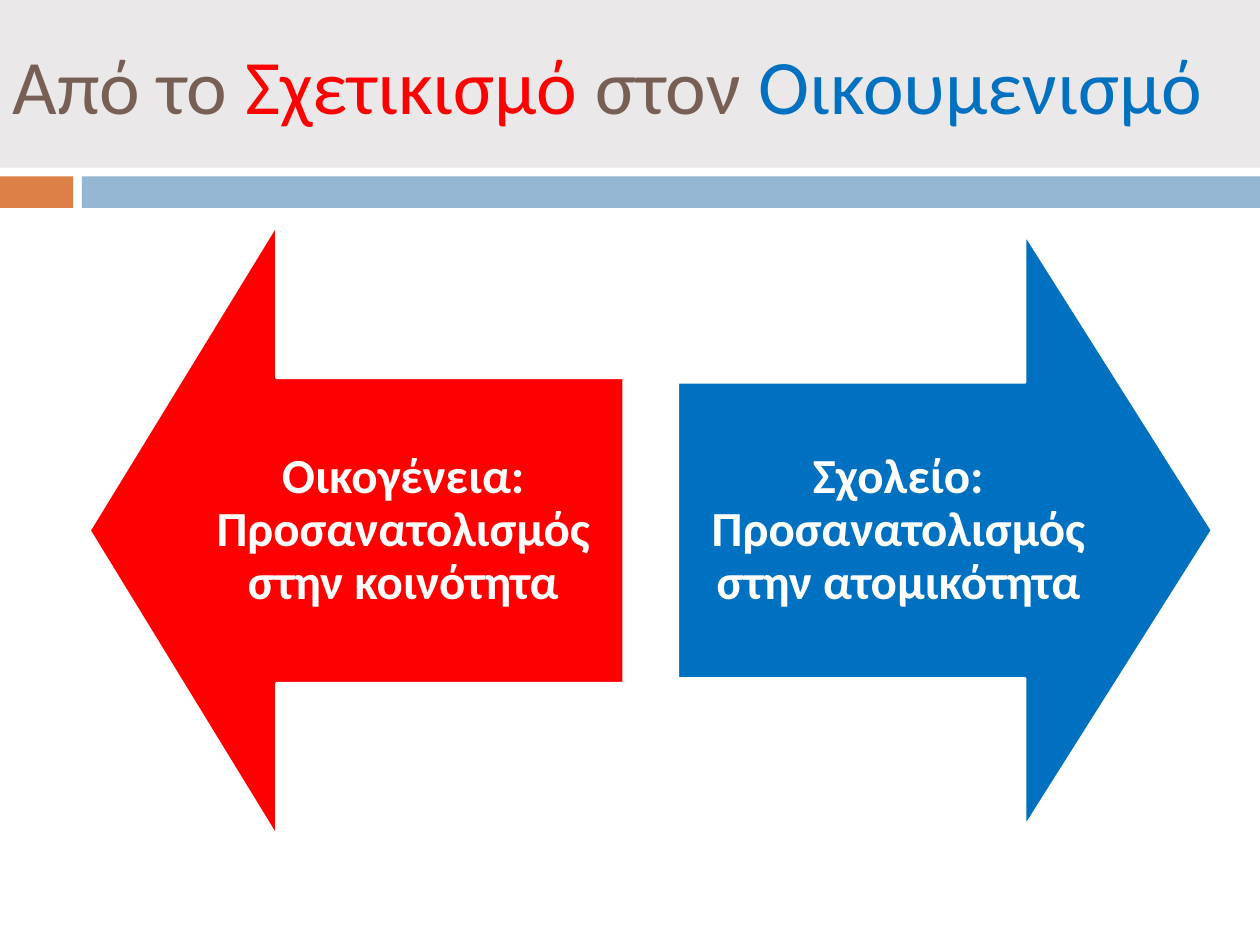
from dataclasses import dataclass

from pptx import Presentation
from pptx.dml.color import RGBColor
from pptx.enum.shapes import MSO_SHAPE
from pptx.enum.text import MSO_ANCHOR, MSO_AUTO_SIZE, PP_ALIGN
from pptx.util import Inches, Pt

RECT, ARROW = MSO_SHAPE.RECTANGLE, MSO_SHAPE.UP_ARROW
MIDDLE, NO_FIT = MSO_ANCHOR.MIDDLE, MSO_AUTO_SIZE.NONE
LEFT, CENTER = PP_ALIGN.LEFT, PP_ALIGN.CENTER
WIDE, HIGH = 10, 7.5
TITLE_ONLY = 5


@dataclass(frozen=True)
class Theme:
    font: str = "Calibri"
    title: int = 44
    body: int = 28
    brown: str = "775F55"
    red: str = "FF0000"
    blue: str = "0070C0"
    white: str = "FFFFFF"
    pale: str = "EAE8E8"
    orange: str = "DD8047"
    sky: str = "94B6D2"


THEME = Theme()


def paint(shape, color):
    shape.fill.solid()
    shape.fill.fore_color.rgb = RGBColor.from_string(color)


def place(shape, box):
    shape.left, shape.top, shape.width, shape.height = map(Inches, box)


def add_run(para, text, size, color, bold=False):
    run = para.add_run()
    run.text = text
    font = run.font
    font.name, font.size, font.bold = THEME.font, Pt(size), bold
    font.color.rgb = RGBColor.from_string(color)


def add_title(slide, box, parts):
    title = slide.shapes.title
    place(title, box)
    paint(title, THEME.pale)
    frame = title.text_frame
    frame.word_wrap, frame.auto_size = True, NO_FIT
    frame.vertical_anchor = MIDDLE
    para = frame.paragraphs[0]
    para.alignment = LEFT
    for text, color in parts:
        add_run(para, text, THEME.title, color)


def add_band(slide, box):
    """Two bars, split by a narrow gap."""
    left, top, width, height = box
    short, gap = 0.58, 0.07
    start = short + gap
    bars = ((left, short, THEME.orange),
            (left + start, width - start, THEME.sky))
    for x, w, color in bars:
        bar = slide.shapes.add_shape(RECT, *map(Inches, (x, top, w, height)))
        paint(bar, color)
        bar.line.fill.background()
        bar.shadow.inherit = False


def add_arrow(slide, box, turn, color, text):
    """Turned arrow whose text box starts at the tail and fills the shaft."""
    left, top, width, height = box
    mid_x, mid_y = left + width / 2, top + height / 2
    # Before the turn, the arrow's width is the height of its box.
    flat = (mid_x - height / 2, mid_y - width / 2, height, width)
    arrow = slide.shapes.add_shape(ARROW, *map(Inches, flat))
    arrow.rotation = turn
    arrow.adjustments[0], arrow.adjustments[1] = 0.5, 0.35
    paint(arrow, color)
    arrow.line.color.rgb = RGBColor.from_string(THEME.white)
    arrow.line.width = Pt(1.5)
    arrow.shadow.inherit = False

    span, shaft = 3.5, height / 2
    x = left if turn == 90 else left + width - span
    area = (x, mid_y - shaft / 2, span, shaft)
    frame = slide.shapes.add_textbox(*map(Inches, area)).text_frame
    frame.word_wrap, frame.vertical_anchor = True, MIDDLE
    frame.margin_left = frame.margin_right = Inches(0.22)
    frame.margin_top = frame.margin_bottom = Inches(0.22)
    para = frame.paragraphs[0]
    para.alignment, para.line_spacing = CENTER, 0.9
    add_run(para, text, THEME.body, THEME.white, True)


def main():
    deck = Presentation()
    deck.slide_width, deck.slide_height = Inches(WIDE), Inches(HIGH)
    slide = deck.slides.add_slide(deck.slide_layouts[TITLE_ONLY])
    add_band(slide, (0, 1.4, WIDE, 0.25))
    add_title(slide, (0, 0, WIDE, 1.33), (
        ("Από το ", THEME.brown), ("Σχετικισμό", THEME.red),
        (" στον ", THEME.brown), ("Οικουμενισμό", THEME.blue)))

    mid, width = 4.21, 4.24
    arrows = (
        (0.71, 4.85, 270, THEME.red,
         "Οικογένεια: Προσανατολισμός στην κοινότητα"),
        (5.38, 4.7, 90, THEME.blue,
         "Σχολείο: Προσανατολισμός στην ατομικότητα"))
    for left, height, turn, color, text in arrows:
        box = (left, mid - height / 2, width, height)
        add_arrow(slide, box, turn, color, text)
    deck.save("out.pptx")


if __name__ == "__main__":
    main()
